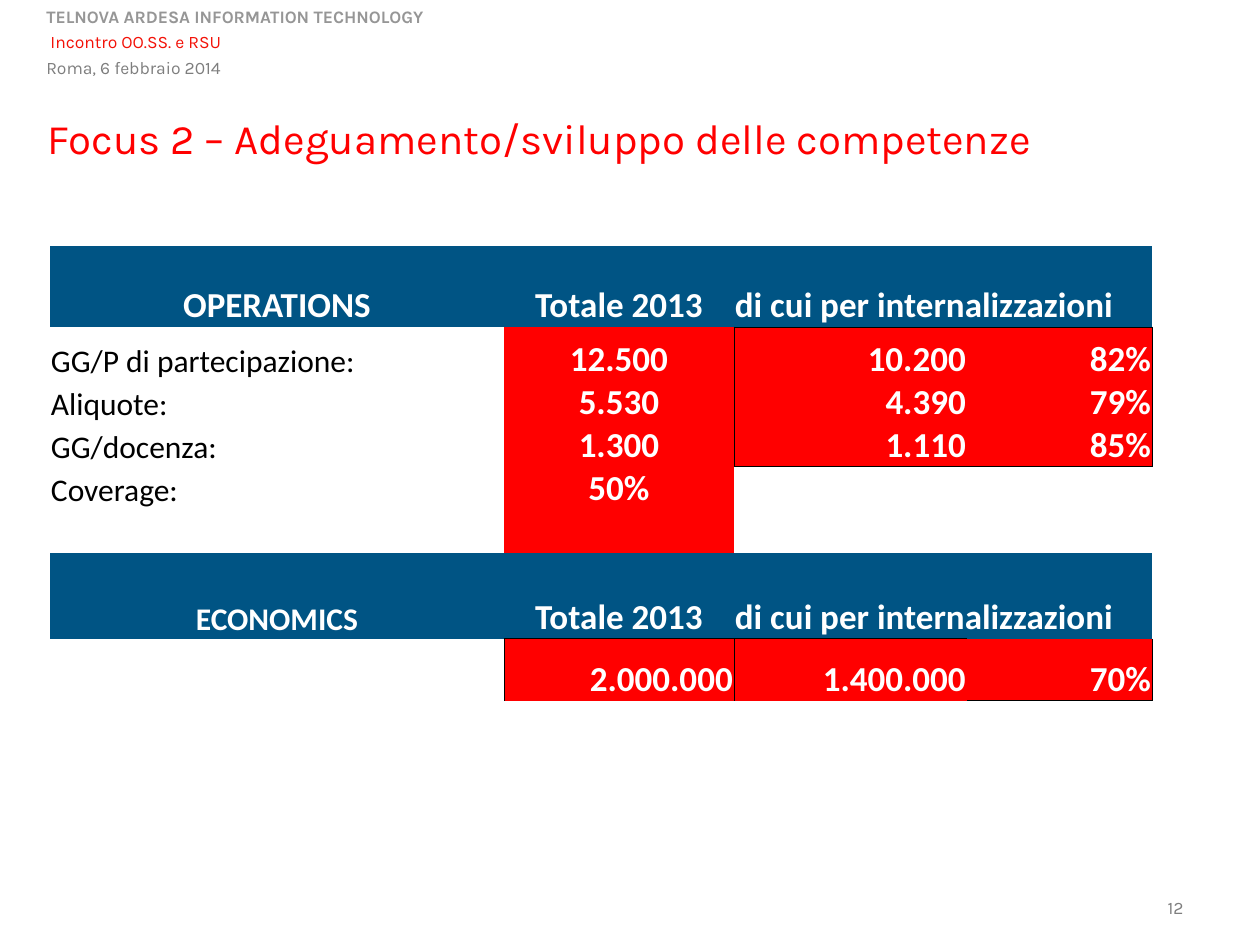
import pptx
import pptx.util
import pptx.dml.color
import pptx.enum.text
import pptx.oxml
import pptx.oxml.ns
from dataclasses import dataclass

ALIGN = pptx.enum.text.PP_ALIGN
ANCHOR = pptx.enum.text.MSO_ANCHOR
SCALE = 914400 / 126  # EMU in one px


def emu(px):
    return pptx.util.Emu(round(px * SCALE))


@dataclass(frozen=True)
class Theme:
    head: str = "Karla"
    body: str = "Calibri"
    red: str = "FF0000"
    blue: str = "005484"
    white: str = "FFFFFF"
    black: str = "000000"
    grey: str = "7E7E7E"
    pale: str = "969696"
    event: str = "F31107"
    tiny: int = 10
    label: int = 18
    value: int = 20
    title: int = 24


class Deck:
    def __init__(self, theme):
        self.theme = theme
        self.file = pptx.Presentation()
        self.file.slide_width = emu(1260)
        self.file.slide_height = emu(945)
        self.slide = self.file.slides.add_slide(self.file.slide_layouts[5])

    def put(self, item, values):
        for name, value in values.items():
            setattr(item, name, value)

    def words(self, para, text, color, size, font, bold=False, **form):
        self.put(para, form)
        run = para.add_run()
        run.text = text
        self.put(run.font, {"name": font, "size": pptx.util.Pt(size), "bold": bold})
        run.font.color.rgb = pptx.dml.color.RGBColor.from_string(color)

    def title(self, box, text):
        shape = self.slide.shapes.title
        self.put(shape, dict(zip(("left", "top", "width", "height"), map(emu, box))))
        self.put(shape.text_frame, {
            "word_wrap": True, "vertical_anchor": ANCHOR.TOP,
            "auto_size": pptx.enum.text.MSO_AUTO_SIZE.NONE})
        self.words(shape.text_frame.paragraphs[0], text, self.theme.red,
                   self.theme.title, self.theme.head,
                   alignment=ALIGN.LEFT, line_spacing=0.8)

    def text(self, box, lines, anchor=ANCHOR.TOP):
        frame = self.slide.shapes.add_textbox(*map(emu, box)).text_frame
        self.put(frame, {"word_wrap": True, "vertical_anchor": anchor})
        for i, (text, color, form) in enumerate(lines):
            para = frame.add_paragraph() if i else frame.paragraphs[0]
            self.words(para, text, color, self.theme.tiny, self.theme.head, **form)

    def table(self, left, top, cols, rows):
        box = map(emu, (left, top, sum(cols), sum(rows)))
        table = self.slide.shapes.add_table(len(rows), len(cols), *box).table
        self.put(table, {"first_row": False, "horz_banding": False})
        for col, width in zip(table.columns, cols):
            col.width = emu(width)
        for row, height in zip(table.rows, rows):
            row.height = emu(height)
        return table

    def cell(self, cell, sides, fill):
        self.put(cell, {"margin_left": emu(1), "margin_right": emu(1),
                        "margin_top": 0, "margin_bottom": 0,
                        "vertical_anchor": ANCHOR.BOTTOM})
        props = cell._tc.get_or_add_tcPr()
        for side in "LRTB":
            paint = "<a:noFill/>"
            if side in sides:
                paint = f'<a:solidFill><a:srgbClr val="{self.theme.black}"/></a:solidFill>'
            props.append(pptx.oxml.parse_xml(
                f'<a:ln{side} {pptx.oxml.ns.nsdecls("a")} w="6350">{paint}</a:ln{side}>'))
        if fill:
            cell.fill.solid()
            cell.fill.fore_color.rgb = pptx.dml.color.RGBColor.from_string(fill)
        else:
            cell.fill.background()


# Table content, with the row number of each band
HEADS = (1, 7)
TOTAL = 8
DATA = {
    1: ("OPERATIONS", "Totale 2013", "di cui per internalizzazioni"),
    2: ("GG/P di partecipazione:", "12.500", "10.200", "82%"),
    3: ("Aliquote:", "5.530", "4.390", "79%"),
    4: ("GG/docenza:", "1.300", "1.110", "85%"),
    5: ("Coverage:", "50%"),
    7: ("ECONOMICS", "Totale 2013", "di cui per internalizzazioni"),
    8: ("", "2.000.000", "1.400.000", "70%"),
}
EDGES = {
    (1, 2): "B", (1, 3): "B",
    (2, 1): "R", (2, 2): "LT", (2, 3): "TR",
    (3, 1): "R", (3, 2): "L", (3, 3): "R",
    (4, 1): "R", (4, 2): "LB", (4, 3): "RB",
    (5, 2): "T", (5, 3): "T",
    (7, 1): "B", (7, 2): "B",
    (8, 0): "R", (8, 1): "LTR", (8, 2): "LT", (8, 3): "RB",
}


def shade(theme, row, col):
    if row in HEADS:
        return theme.blue
    boxed = col == 1 and row > 1 or col > 1 and row in (2, 3, 4, TOTAL)
    return theme.red if boxed else None


def align(row, col):
    if row in HEADS:
        return ALIGN.LEFT if col == 2 else ALIGN.CENTER
    if row == TOTAL:
        return ALIGN.RIGHT
    return (ALIGN.LEFT, ALIGN.CENTER, ALIGN.RIGHT, ALIGN.RIGHT)[col]


def main():
    theme = Theme()
    deck = Deck(theme)

    # Page header
    deck.text((34, 0, 630, 84), [
        ("TELNOVA ARDESA INFORMATION TECHNOLOGY", theme.pale, {"bold": True}),
        (" Incontro OO.SS. e RSU", theme.event, {"line_spacing": 1.2}),
        ("Roma, 6 febbraio 2014", theme.grey, {"line_spacing": 1.2}),
    ])

    # Title and page number
    deck.title((35, 116, 1211, 52), "Focus 2 – Adeguamento/sviluppo delle competenze")
    deck.text((1057, 879, 139, 45),
              [("12", theme.grey, {"alignment": ALIGN.RIGHT})], ANCHOR.BOTTOM)

    # Training figures
    rows = (52, 81, 54, 43, 43, 43, 43, 86, 62)
    cols = (454, 230, 233, 185)
    table = deck.table(50, 194, cols, rows)
    for row in range(len(rows)):
        for col in range(len(cols)):
            deck.cell(table.cell(row, col), EDGES.get((row, col), ""),
                      shade(theme, row, col))
    for row in HEADS:
        table.cell(row, 2).merge(table.cell(row, 3))
    for row, texts in DATA.items():
        for col, text in enumerate(texts):
            if not text:
                continue
            label = col == 0 and row not in HEADS
            small = col == 0 and row != HEADS[0]
            deck.words(table.cell(row, col).text_frame.paragraphs[0], text,
                       theme.black if label else theme.white,
                       theme.label if small else theme.value,
                       theme.body, not label, alignment=align(row, col))

    deck.file.save("out.pptx")


if __name__ == "__main__":
    main()
